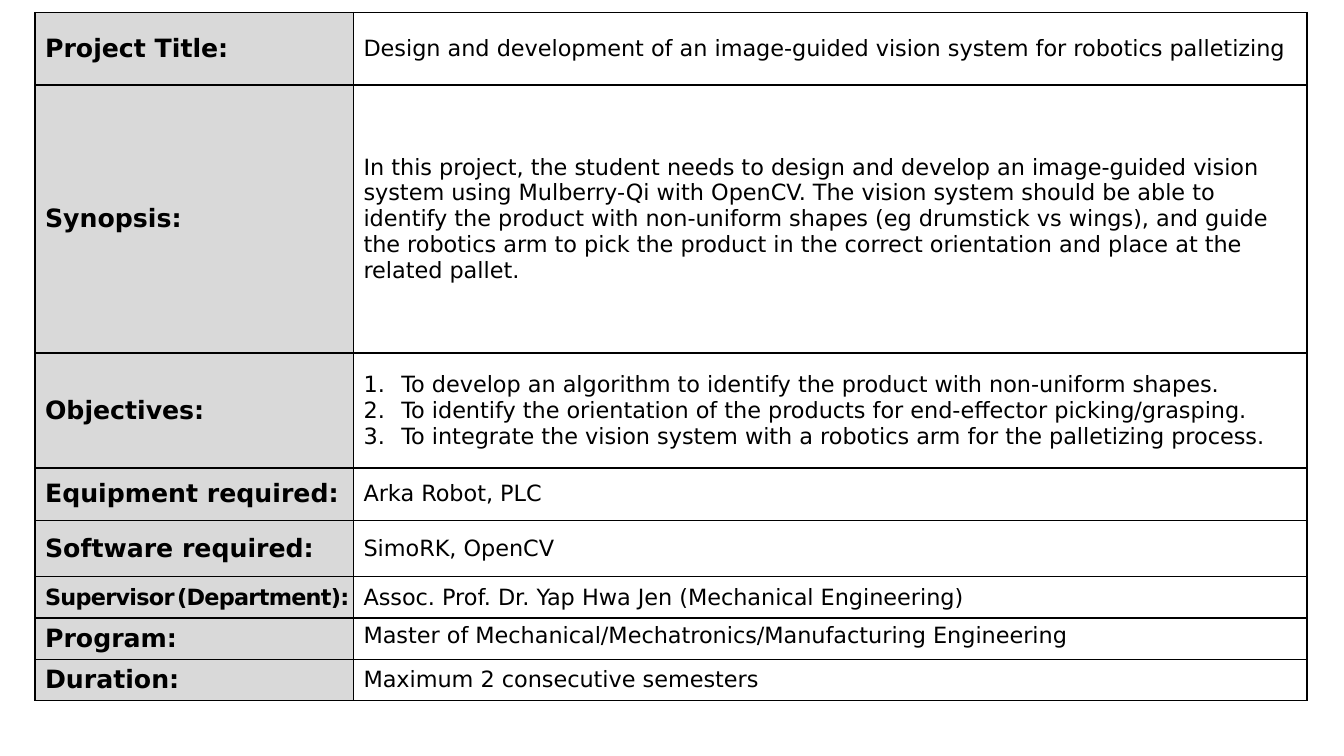
import pptx
import pptx.dml.color
import pptx.enum.text
import pptx.oxml
import pptx.oxml.ns
import pptx.util

Pt = pptx.util.Pt
BLACK = pptx.dml.color.RGBColor(0x00, 0x00, 0x00)
LABEL_GREY = pptx.dml.color.RGBColor(0xD9, 0xD9, 0xD9)

COLUMN_WIDTHS = [227.5, 681.1]
LABEL_SIZE, DETAIL_SIZE = 18, 16

# Row height, label, paragraphs of detail
PROJECT_ROWS = [
    (51.8, "Project Title:",
     ["Design and development of an image-guided vision system for robotics palletizing"]),
    (191.5, "Synopsis:",
     ["In this project, the student needs to design and develop an image-guided vision "
      "system using Mulberry-Qi with OpenCV. The vision system should be able to identify "
      "the product with non-uniform shapes (eg drumstick vs wings), and guide the robotics "
      "arm to pick the product in the correct orientation and place at the related pallet."]),
    (82.1, "Objectives:",
     ["To develop an algorithm to identify the product with non-uniform shapes.",
      "To identify the orientation of the products for end-effector picking/grasping.",
      "To integrate the vision system with a robotics arm for the palletizing process."]),
    (37.4, "Equipment required:", ["Arka Robot, PLC"]),
    (40.3, "Software required:", ["SimoRK, OpenCV"]),
    (29.5, "Supervisor (Department):",
     ["Assoc. Prof. Dr. Yap Hwa Jen (Mechanical Engineering)"]),
    (29.5, "Program:", ["Master of Mechanical/Mechatronics/Manufacturing Engineering"]),
    (29.5, "Duration:", ["Maximum 2 consecutive semesters"]),
]


class SlideBuilder:
    """Holds the style and the current slide."""

    font_name = "DejaVu Sans"
    text_color = BLACK
    border_width = 1
    number_indent = 27

    def __init__(self, slide):
        self.slide = slide

    def table(self, left, top, widths, heights):
        frame = self.slide.shapes.add_table(
            len(heights), len(widths), Pt(left), Pt(top), Pt(sum(widths)), Pt(sum(heights)))
        table = frame.table
        table.first_row = table.horz_banding = False
        for column, width in zip(table.columns, widths):
            column.width = Pt(width)
        for row, height in zip(table.rows, heights):
            row.height = Pt(height)
        return table

    def cell(self, cell, texts, size, bold=False, fill=None, numbered=False):
        cell.vertical_anchor = pptx.enum.text.MSO_ANCHOR.MIDDLE
        if fill is None:
            cell.fill.background()
        else:
            cell.fill.solid()
            cell.fill.fore_color.rgb = fill
        self.borders(cell)
        for index, text in enumerate(texts):
            frame = cell.text_frame
            paragraph = frame.add_paragraph() if index else frame.paragraphs[0]
            paragraph.text = text
            self.style(paragraph, size, bold)
            if numbered:
                self.number(paragraph)

    def style(self, paragraph, size, bold):
        font = paragraph.font
        font.name, font.size, font.bold = self.font_name, Pt(size), bold
        font.color.rgb = self.text_color

    def number(self, paragraph):
        properties = paragraph._p.get_or_add_pPr()
        indent = Pt(self.number_indent)
        properties.set("marL", str(indent))
        properties.set("indent", str(-indent))
        properties.insert(0, pptx.oxml.parse_xml(
            f'<a:buAutoNum {pptx.oxml.ns.nsdecls("a")} type="arabicPeriod"/>'))

    def borders(self, cell):
        properties = cell._tc.get_or_add_tcPr()
        for index, side in enumerate("LRTB"):
            properties.insert(index, pptx.oxml.parse_xml(
                f'<a:ln{side} {pptx.oxml.ns.nsdecls("a")} w="{Pt(self.border_width)}">'
                f'<a:solidFill><a:srgbClr val="{self.text_color}"/></a:solidFill></a:ln{side}>'))

    def condensed_label(self, cell, pieces, spacing):
        """Replace the label by tightly spaced runs of (text, size)."""
        cell.margin_right = 0
        paragraph = cell.text_frame.paragraphs[0]
        paragraph.clear()
        for text, size in pieces:
            run = paragraph.add_run()
            run.text = text
            run.font.size = Pt(size)
            run._r.get_or_add_rPr().set("spc", str(int(spacing * 100)))


def main():
    presentation = pptx.Presentation()
    presentation.slide_width, presentation.slide_height = Pt(960), Pt(540)
    builder = SlideBuilder(presentation.slides.add_slide(presentation.slide_layouts[6]))

    # Project table
    table = builder.table(25, 8.9, COLUMN_WIDTHS, [row[0] for row in PROJECT_ROWS])
    for index, (_, label, details) in enumerate(PROJECT_ROWS):
        label_cell, detail_cell = table.cell(index, 0), table.cell(index, 1)
        builder.cell(label_cell, [label], LABEL_SIZE, bold=True, fill=LABEL_GREY)
        builder.cell(detail_cell, details, DETAIL_SIZE, numbered=len(details) > 1)
        # The longest label is condensed to stay on one line
        if label.startswith("Supervisor"):
            builder.condensed_label(
                label_cell, [("Supervisor", 16), (" ", 5), ("(Department):", 16)], -0.5)
        # The program text sits at the top of its cell
        if label == "Program:":
            detail_cell.vertical_anchor = pptx.enum.text.MSO_ANCHOR.TOP

    presentation.save("out.pptx")


if __name__ == "__main__":
    main()
